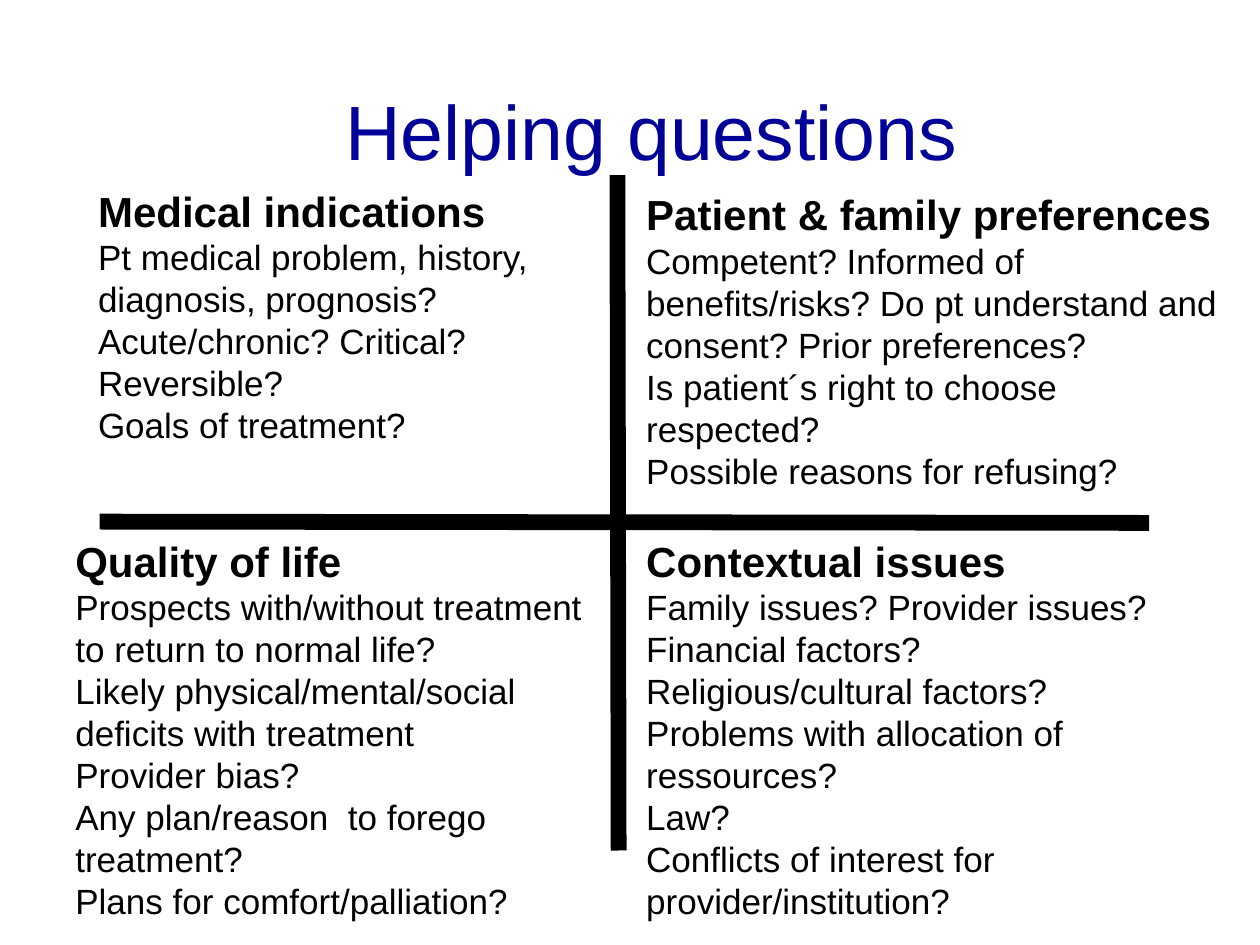
from dataclasses import dataclass

import pptx
import pptx.dml.color
import pptx.enum.shapes
import pptx.enum.text
import pptx.oxml.ns
import pptx.slide
import pptx.util
from lxml import etree
from pptx.util import Inches

BLACK = pptx.dml.color.RGBColor(0x00, 0x00, 0x00)
NAVY = pptx.dml.color.RGBColor(0x00, 0x00, 0x99)
FONT = "Arial"


@dataclass
class Quadrant:
    left: float
    top: float
    width: float
    height: float
    indent: float
    heading: str
    questions: list[str]


@dataclass
class Divider:
    start: tuple[float, float]
    end: tuple[float, float]


DIVIDERS = [
    Divider((4.9, 1.39), (4.91, 6.75)),
    Divider((0.79, 4.14), (9.12, 4.15)),
]

QUADRANTS = [
    Quadrant(0.68, 1.42, 4.54, 2.19, 0, "Medical indications", [
        "Pt medical problem, history, diagnosis, prognosis?",
        "Acute/chronic? Critical? Reversible?",
        "Goals of treatment?",
    ]),
    Quadrant(0, 4.2, 4.76, 3.2, 0.5, "Quality of life", [
        "Prospects with/without treatment to return to normal life?",
        "Likely physical/mental/social deficits with treatment",
        "Provider bias?",
        "Any plan/reason  to forego treatment?",
        "Plans for comfort/palliation?",
    ]),
    Quadrant(4.53, 4.2, 5.35, 3.2, 0.5, "Contextual issues", [
        "Family issues? Provider issues?",
        "Financial factors?",
        "Religious/cultural factors?",
        "Problems with allocation of ressources?",
        "Law?",
        "Conflicts of interest for provider/institution?",
    ]),
    Quadrant(4.53, 1.45, 5.35, 2.52, 0.5, "Patient & family preferences", [
        "Competent? Informed of benefits/risks? Do pt understand and consent? "
        "Prior preferences?",
        "Is patient´s right to choose respected?",
        "Possible reasons for refusing?",
    ]),
]


def set_font(paragraph, size: int, color: pptx.dml.color.RGBColor, bold: bool = False) -> None:
    paragraph.font.name = FONT
    paragraph.font.size = pptx.util.Pt(size)
    paragraph.font.bold = bold
    paragraph.font.color.rgb = color


def add_divider(slide: pptx.slide.Slide, divider: Divider) -> None:
    points = [Inches(value) for value in divider.start + divider.end]
    line = slide.shapes.add_connector(pptx.enum.shapes.MSO_CONNECTOR.STRAIGHT, *points)
    line.line.color.rgb = BLACK
    line.line.width = pptx.util.Pt(9)
    etree.SubElement(line.element.spPr, pptx.oxml.ns.qn("a:effectLst"))


def add_text_frame(slide: pptx.slide.Slide, left: float, top: float, width: float, height: float):
    shape = slide.shapes.add_textbox(Inches(left), Inches(top), Inches(width), Inches(height))
    shape.text_frame.word_wrap = True
    return shape.text_frame


def add_quadrant(slide: pptx.slide.Slide, quadrant: Quadrant) -> None:
    frame = add_text_frame(slide, quadrant.left, quadrant.top, quadrant.width, quadrant.height)
    frame.auto_size = pptx.enum.text.MSO_AUTO_SIZE.SHAPE_TO_FIT_TEXT
    frame.text = "\n".join([quadrant.heading, *quadrant.questions])
    for index, paragraph in enumerate(frame.paragraphs):
        if quadrant.indent:
            paragraph.level = 1
            properties = paragraph._p.get_or_add_pPr()
            properties.set("marL", str(Inches(quadrant.indent)))
            properties.set("indent", "0")
        is_heading = index == 0
        set_font(paragraph, 24 if is_heading else 20, BLACK, is_heading)


def main() -> None:
    presentation = pptx.Presentation()
    presentation.slide_width = Inches(10)
    presentation.slide_height = Inches(7.5)
    slide = presentation.slides.add_slide(presentation.slide_layouts[6])

    # Cross that separates the four quadrants
    for divider in DIVIDERS:
        add_divider(slide, divider)

    # Questions
    for quadrant in QUADRANTS:
        add_quadrant(slide, quadrant)

    # Title
    frame = add_text_frame(slide, 0.42, 0.28, 9.5, 1.5)
    frame.vertical_anchor = pptx.enum.text.MSO_ANCHOR.MIDDLE
    frame.text = "Helping questions"
    title = frame.paragraphs[0]
    title.alignment = pptx.enum.text.PP_ALIGN.CENTER
    set_font(title, 44, NAVY)

    presentation.save("out.pptx")


if __name__ == "__main__":
    main()
